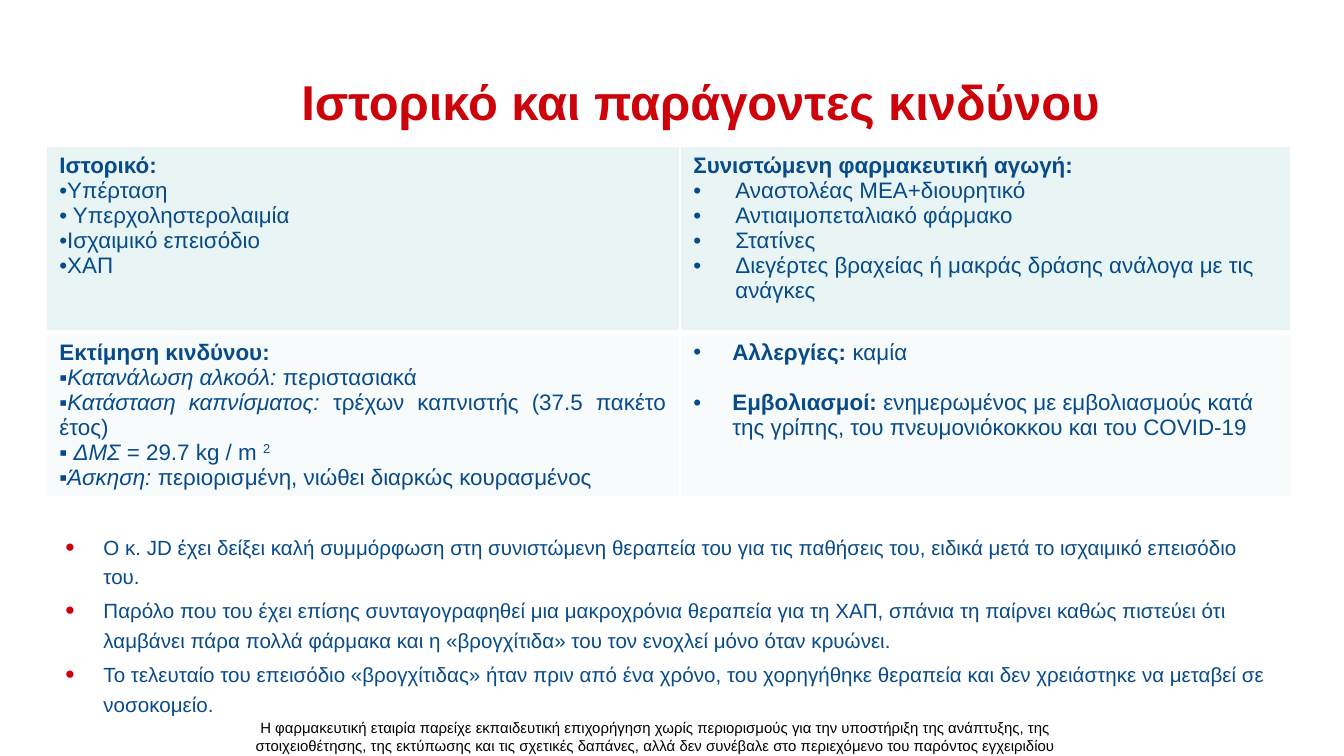
"""Build the slide on patient history and risk factors."""
from dataclasses import dataclass
from typing import Optional

from lxml.etree import SubElement
from pptx import Presentation
from pptx.dml.color import RGBColor
from pptx.enum.text import MSO_ANCHOR, MSO_AUTO_SIZE, PP_ALIGN
from pptx.oxml.ns import qn
from pptx.util import Emu, Pt

SCALE = 914400 / 134.4
RED, NAVY, BLACK, WHITE = "CC030B", "074B88", "000000", "FFFFFF"
LEFT, CENTER, JUSTIFY = PP_ALIGN.LEFT, PP_ALIGN.CENTER, PP_ALIGN.JUSTIFY


@dataclass
class Run:
    text: str
    bold: bool = False
    italic: bool = False
    baseline: int = 0


@dataclass
class Para:
    runs: list[Run]
    bullet: str = ""
    indent: int = 0
    align: PP_ALIGN = LEFT
    before: float = 0
    spacing: float = 1.0
    bullet_color: Optional[str] = None


def px(n: int) -> Emu:
    """Turn pixels into EMU."""
    return Emu(round(n * SCALE))


def rgb(color: str) -> RGBColor:
    """Turn a hex string into a colour."""
    return RGBColor.from_string(color)


def set_all(obj, values: dict) -> None:
    """Set each attribute in values on obj."""
    for name, value in values.items():
        setattr(obj, name, value)


def place(sp, x: int, y: int, w: int, h: int) -> None:
    """Move and size a shape."""
    set_all(sp, {"left": px(x), "top": px(y), "width": px(w), "height": px(h)})


def set_bullet(p, para: Para) -> None:
    """Give a paragraph its hanging indent and bullet."""
    pPr = p._p.get_or_add_pPr()
    pPr.set("marL", str(px(para.indent)))
    pPr.set("indent", str(-px(para.indent)))
    if not para.bullet:
        SubElement(pPr, qn("a:buNone"))
        return
    if para.bullet_color:
        clr = SubElement(pPr, qn("a:buClr"))
        SubElement(clr, qn("a:srgbClr"), val=para.bullet_color)
        SubElement(pPr, qn("a:buSzPct"), val="130000")
    SubElement(pPr, qn("a:buFont"), typeface="Arial")
    SubElement(pPr, qn("a:buChar"), char=para.bullet)


def write(tf, paras: list[Para], size: float, color: str) -> None:
    """Fill a text frame with paragraphs."""
    for i, para in enumerate(paras):
        p = tf.add_paragraph() if i else tf.paragraphs[0]
        set_bullet(p, para)
        set_all(p, {"alignment": para.align, "line_spacing": para.spacing,
                    "space_before": Pt(para.before), "space_after": Pt(0)})
        for run in para.runs:
            r = p.add_run()
            r.text = run.text
            set_all(r.font, {"name": "Arial", "size": Pt(size),
                             "bold": run.bold, "italic": run.italic})
            r.font.color.rgb = rgb(color)
            if run.baseline:
                r.font._element.set("baseline", str(run.baseline * 1000))


def set_borders(cell, widths: dict) -> None:
    """Draw white cell borders, widths in points by side."""
    tcPr = cell._tc.get_or_add_tcPr()
    for side, width in widths.items():
        ln = SubElement(tcPr, qn(f"a:ln{side}"), w=str(Pt(width)))
        fill = SubElement(ln, qn("a:solidFill"))
        SubElement(fill, qn("a:srgbClr"), val=WHITE)


def heading(text: str, align: PP_ALIGN = LEFT) -> Para:
    """Make a bold line without a bullet."""
    return Para([Run(text, bold=True)], align=align)


def labelled(label: str, text: str) -> Para:
    """Make a square-bulleted line with an italic label."""
    return Para([Run(label, italic=True), Run(text)], "▪", align=JUSTIFY)


HISTORY = ["Υπέρταση", " Υπερχοληστερολαιμία", "Ισχαιμικό επεισόδιο", "ΧΑΠ"]
DRUGS = ["Αναστολέας ΜΕΑ+διουρητικό", "Αντιαιμοπεταλιακό φάρμακο", "Στατίνες",
         "Διεγέρτες βραχείας ή μακράς δράσης ανάλογα με τις ανάγκες"]
CELLS = [
    [[heading("Ιστορικό:")] + [Para([Run(t)], "•", align=JUSTIFY) for t in HISTORY],
     [heading("Συνιστώμενη φαρμακευτική αγωγή:")]
     + [Para([Run(t)], "•", 42) for t in DRUGS]],
    [[heading("Εκτίμηση κινδύνου:", JUSTIFY),
      labelled("Κατανάλωση αλκοόλ: ", "περιστασιακά"),
      labelled("Κατάσταση καπνίσματος: ", "τρέχων καπνιστής (37.5 πακέτο έτος)"),
      Para([Run(" "), Run("ΔΜΣ ", italic=True), Run("= 29.7 kg / m "),
            Run("2", baseline=30)], "▪", align=JUSTIFY),
      labelled("Άσκηση: ", "περιορισμένη, νιώθει διαρκώς κουρασμένος")],
     [Para([Run("Αλλεργίες: ", bold=True), Run("καμία")], "•", 39, JUSTIFY),
      Para([Run("Εμβολιασμοί: ", bold=True),
            Run("ενημερωμένος με εμβολιασμούς κατά της γρίπης, του "
                "πνευμονιόκοκκου και του COVID-19")], "•", 39, before=13.5)]],
]
FILLS = ["E9F4F5", "F8FBFC"]
NOTES = [
    "Ο κ. JD έχει δείξει καλή συμμόρφωση στη συνιστώμενη θεραπεία του για τις "
    "παθήσεις του, ειδικά μετά το ισχαιμικό επεισόδιο του.",
    "Παρόλο που του έχει επίσης συνταγογραφηθεί μια μακροχρόνια θεραπεία για τη ΧΑΠ, "
    "σπάνια τη παίρνει καθώς πιστεύει ότι λαμβάνει πάρα πολλά φάρμακα και η "
    "«βρογχίτιδα» του τον ενοχλεί μόνο όταν κρυώνει.",
    "Το τελευταίο του επεισόδιο «βρογχίτιδας» ήταν πριν από ένα χρόνο, του χορηγήθηκε "
    "θεραπεία και δεν χρειάστηκε να μεταβεί σε νοσοκομείο.",
]
FOOTER = ("Η φαρμακευτική εταιρία παρείχε εκπαιδευτική επιχορήγηση χωρίς περιορισμούς "
          "για την υποστήριξη της ανάπτυξης, της στοιχειοθέτησης, της εκτύπωσης και τις "
          "σχετικές δαπάνες, αλλά δεν συνέβαλε στο περιεχόμενο του παρόντος εγχειριδίου")


def add_table(s) -> None:
    """Add the two by two table of history and risks."""
    widths, heights = [634, 611], [187, 164]
    table = s.shapes.add_table(2, 2, px(46), px(146), px(sum(widths)),
                               px(sum(heights))).table
    set_all(table, {"first_row": False, "horz_banding": False})
    for col, w in zip(table.columns, widths):
        col.width = px(w)
    for i, (row, h) in enumerate(zip(table.rows, heights)):
        row.height = px(h)
        for cell, paras in zip(row.cells, CELLS[i]):
            set_borders(cell, {"L": 1, "R": 1, "T": 1 if i == 0 else 3,
                               "B": 3 if i == 0 else 1})
            cell.fill.solid()
            cell.fill.fore_color.rgb = rgb(FILLS[i])
            write(cell.text_frame, paras, 12, NAVY)


def main() -> None:
    """Build and save the slide."""
    prs = Presentation()
    set_all(prs, {"slide_width": px(1344), "slide_height": px(756)})
    s = prs.slides.add_slide(prs.slide_layouts[1])
    title, body = s.placeholders
    place(title, 288, 59, 1056, 83)
    place(body, 52, 523, 1240, 219)
    footer = s.shapes.add_textbox(0, 0, 0, 0)
    place(footer, 222, 718, 868, 38)
    frame = {"word_wrap": True, "auto_size": MSO_AUTO_SIZE.NONE}
    for sp, anchor in ((title, MSO_ANCHOR.MIDDLE), (body, MSO_ANCHOR.TOP),
                       (footer, MSO_ANCHOR.TOP)):
        set_all(sp.text_frame, frame | {"vertical_anchor": anchor})
    set_all(footer.text_frame, {"margin_left": 0, "margin_right": 0,
                                "margin_top": px(1), "margin_bottom": 0})
    write(title.text_frame, [heading("Ιστορικό και παράγοντες κινδύνου")], 26.2, RED)
    write(body.text_frame,
          [Para([Run(t)], "•", 38, before=2.4 if i else 0, spacing=1.2,
                bullet_color=RED) for i, t in enumerate(NOTES)], 11, NAVY)
    write(footer.text_frame, [Para([Run(FOOTER)], align=CENTER)], 8, BLACK)
    add_table(s)
    prs.save("out.pptx")


if __name__ == "__main__":
    main()
